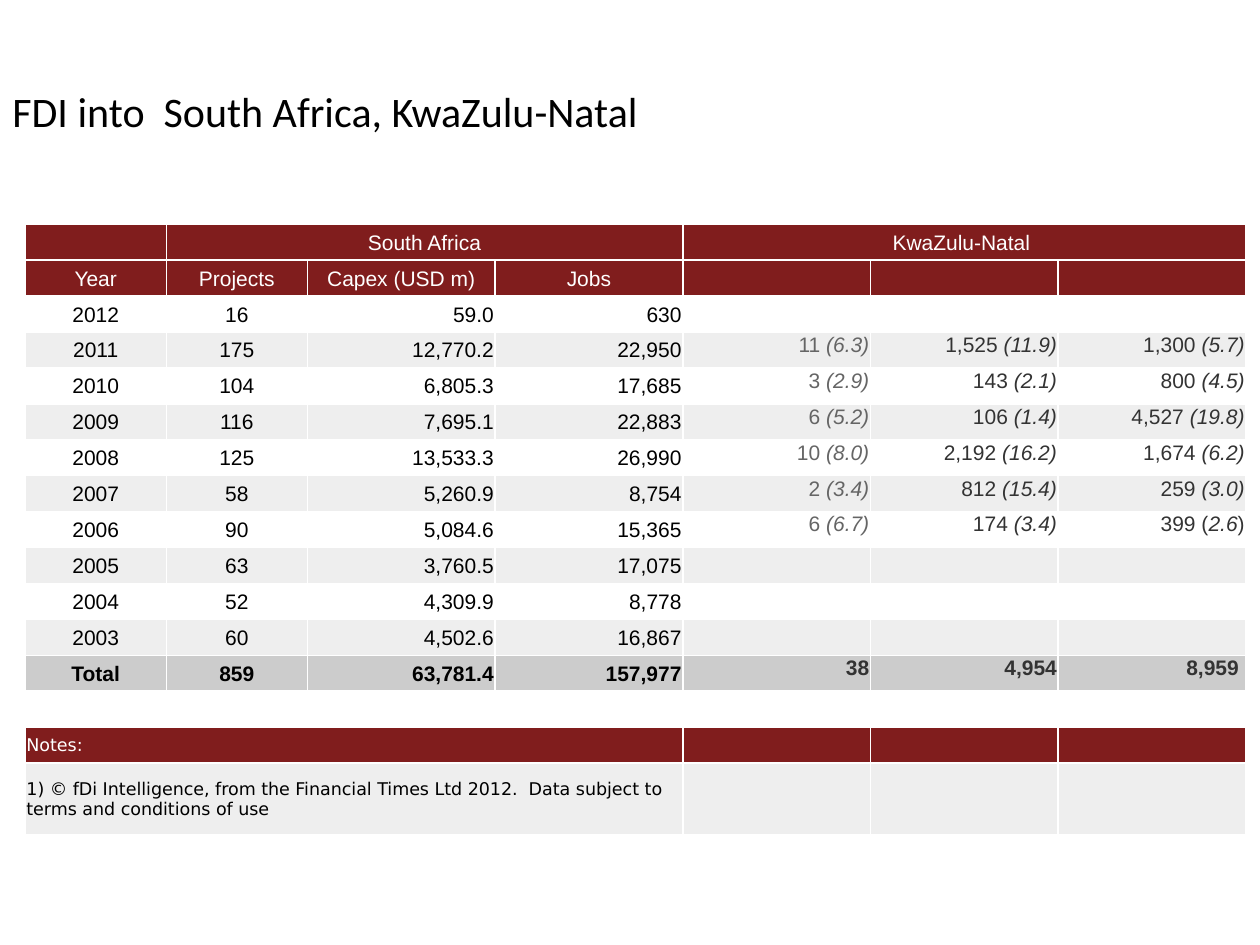
from pptx import Presentation
from pptx.dml.color import RGBColor
from pptx.enum.text import MSO_ANCHOR as Anchor, PP_ALIGN as Align
from pptx.util import Inches, Pt

MAROON = RGBColor(0x80, 0x1D, 0x1D)
WHITE = RGBColor(0xFF, 0xFF, 0xFF)
BLACK = RGBColor(0, 0, 0)
LIGHT_GRAY = RGBColor(0xEE, 0xEE, 0xEE)
TOTAL_GRAY = RGBColor(0xCC, 0xCC, 0xCC)
MID_GRAY = RGBColor(0x65, 0x65, 0x65)
DARK_GRAY = RGBColor(0x33, 0x33, 0x33)

COLUMN_WIDTHS = [1.12, 1.12] + [1.49] * 5
GROUPS = ["", "South Africa", "", "", "KwaZulu-Natal ", "", ""]
HEADINGS = ["Year", "Projects", "Capex (USD m)", "Jobs", "", "", ""]
YEARS = [
    ["2012", "16", "59.0", "630", "", "", ""],
    ["2011", "175", "12,770.2", "22,950", "11 *(6.3)*", "1,525 *(11.9)*", "1,300 *(5.7)*"],
    ["2010", "104", "6,805.3", "17,685", "3 *(2.9)*", "143 *(2.1)*", "800 *(4.5)*"],
    ["2009", "116", "7,695.1", "22,883", "6 *(5.2)*", "106 *(1.4)*", "4,527 *(19.8)*"],
    ["2008", "125", "13,533.3", "26,990", "10 *(8.0)*", "2,192 *(16.2)*", "1,674 *(6.2)*"],
    ["2007", "58", "5,260.9", "8,754", "2 *(3.4)*", "812 *(15.4)*", "259 *(3.0)*"],
    ["2006", "90", "5,084.6", "15,365", "6 *(6.7)*", "174 *(3.4)*", "399 (*2.6*)"],
    ["2005", "63", "3,760.5", "17,075", "", "", ""],
    ["2004", "52", "4,309.9", "8,778", "", "", ""],
    ["2003", "60", "4,502.6", "16,867", "", "", ""],
]
TOTALS = ["Total", "859", "63,781.4", "157,977", "38", "4,954", "8,959 "]
SOURCE_NOTE = (
    "1) © fDi Intelligence, from the Financial Times Ltd 2012.  "
    "Data subject to terms and conditions of use"
)
NOTES = [("", WHITE, BLACK), ("Notes:", MAROON, WHITE), (SOURCE_NOTE, LIGHT_GRAY, BLACK)]


def add_title(slide, left, top, width, height):
    box = slide.shapes.add_textbox(left, top, width, height)
    frame = box.text_frame
    frame.word_wrap = True
    frame.vertical_anchor = Anchor.MIDDLE
    paragraph = frame.paragraphs[0]
    paragraph.text = "FDI into  South Africa, KwaZulu-Natal"
    paragraph.font.size = Pt(24)
    paragraph.font.name = "Calibri"
    paragraph.font.color.rgb = BLACK


def fill_cell(cell, text, fill, color, align=Align.CENTER, anchor=Anchor.MIDDLE,
              size=12, font="Arial", bold=False):
    cell.fill.solid()
    cell.fill.fore_color.rgb = fill
    cell.margin_left = cell.margin_right = cell.margin_top = Inches(0.01)
    cell.margin_bottom = 0
    cell.vertical_anchor = anchor
    paragraph = cell.text_frame.paragraphs[0]
    paragraph.alignment = align
    paragraph.font.size = Pt(size)
    paragraph.font.name = font
    paragraph.font.bold = bold
    paragraph.font.color.rgb = color
    if not text:
        paragraph._p.get_or_add_endParaRPr().set("sz", str(size * 100))
        return
    for index, part in enumerate(text.split("*")):
        if part:
            run = paragraph.add_run()
            run.text = part
            if index % 2:
                run.font.italic = True


def fill_header(table):
    for row, texts in enumerate([GROUPS, HEADINGS]):
        for column, text in enumerate(texts):
            fill_cell(table.cell(row, column), text, MAROON, WHITE)
    for first in (1, 4):
        table.cell(0, first).merge(table.cell(0, first + 2))


def fill_data_row(table, row, texts, fill, bold=False):
    for column, text in enumerate(texts):
        province = column >= 4
        color = DARK_GRAY if province else BLACK
        if column == 4 and not bold:
            color = MID_GRAY
        fill_cell(table.cell(row, column), text, fill, color,
                  Align.CENTER if column < 2 else Align.RIGHT,
                  Anchor.TOP if province else Anchor.MIDDLE, bold=bold)


def fill_notes(table, first_row):
    for row, (text, fill, color) in enumerate(NOTES, first_row):
        for column in range(len(COLUMN_WIDTHS)):
            fill_cell(table.cell(row, column), "" if column else text, fill, color,
                      Align.LEFT, size=10, font="DejaVu Sans")
        table.cell(row, 0).merge(table.cell(row, 3))


def add_investment_table(slide, left, top, width, height):
    total_row = 2 + len(YEARS)
    row_count = total_row + 1 + len(NOTES)
    table = slide.shapes.add_table(
        row_count, len(COLUMN_WIDTHS), left, top, width, height).table
    for column, column_width in zip(table.columns, COLUMN_WIDTHS):
        column.width = Inches(column_width)
    row_height = height // (row_count + 1)
    for row in table.rows:
        row.height = row_height
    table.rows[row_count - 1].height = 2 * row_height

    fill_header(table)
    for index, texts in enumerate(YEARS):
        fill_data_row(table, 2 + index, texts, LIGHT_GRAY if index % 2 else WHITE)
    fill_data_row(table, total_row, TOTALS, TOTAL_GRAY, bold=True)
    fill_notes(table, total_row + 1)


def main():
    presentation = Presentation()
    presentation.slide_width = Inches(10)
    presentation.slide_height = Inches(7.5)
    slide = presentation.slides.add_slide(presentation.slide_layouts[6])
    add_title(slide, Inches(0), Inches(0.6), Inches(9.45), Inches(0.55))
    add_investment_table(
        slide, Inches(0.2), Inches(1.78), Inches(sum(COLUMN_WIDTHS)), Inches(4.85))
    presentation.save("out.pptx")


if __name__ == "__main__":
    main()
